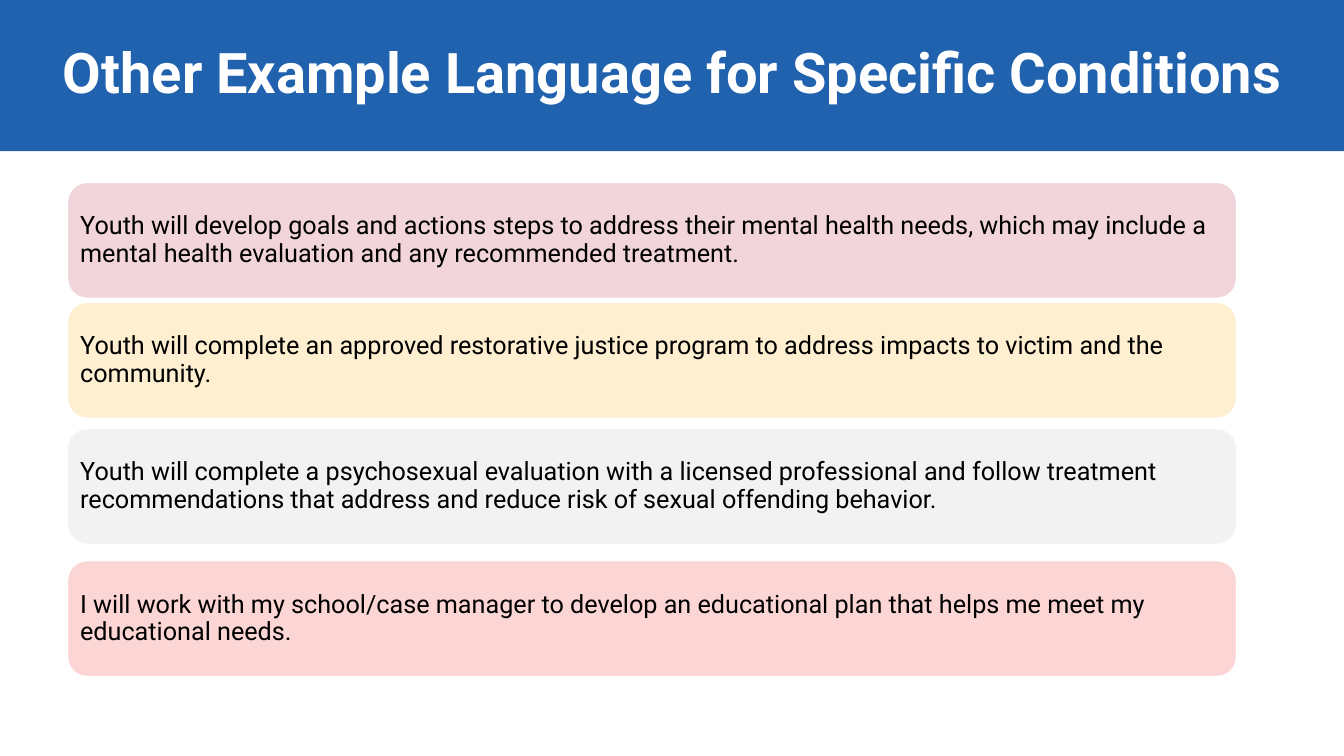
import pptx
import pptx.dml.color
import pptx.enum.shapes
import pptx.enum.text
import pptx.util
from pptx.dml.color import RGBColor

Pt = pptx.util.Pt

WHITE = RGBColor(0xFF, 0xFF, 0xFF)
BLACK = RGBColor(0x00, 0x00, 0x00)
BLUE = RGBColor(0x21, 0x62, 0xAE)
ROSE = RGBColor(0xF1, 0xD5, 0xDA)
CREAM = RGBColor(0xFE, 0xEF, 0xD1)
GRAY = RGBColor(0xF2, 0xF2, 0xF2)
PINK = RGBColor(0xFC, 0xD6, 0xD4)

SLIDE_WIDTH, SLIDE_HEIGHT = 960, 540

# Top, fill and wording of each example card
EXAMPLES = [
    (130.3, ROSE, "Youth will develop goals and actions steps to address their mental health needs, "
                  "which may include a mental health evaluation and any recommended treatment."),
    (216, CREAM, "Youth will complete an approved restorative justice program to address impacts "
                 "to victim and the community."),
    (306, GRAY, "Youth will complete a psychosexual evaluation with a licensed professional and "
                "follow treatment recommendations that address and reduce risk of sexual "
                "offending behavior."),
    (400.5, PINK, "I will work with my school/case manager to develop an educational plan that "
                  "helps me meet my educational needs."),
]


class SlideBuilder:
    """Holds the style and the current slide."""

    font_name = "Roboto"
    line_spacing = 0.9

    def __init__(self, slide):
        self.slide = slide

    def set_text(self, shape, text, size, color, alignment, bold=False):
        frame = shape.text_frame
        frame.text = text
        frame.word_wrap = True
        frame.auto_size = pptx.enum.text.MSO_AUTO_SIZE.NONE
        frame.vertical_anchor = pptx.enum.text.MSO_ANCHOR.MIDDLE
        paragraph = frame.paragraphs[0]
        paragraph.alignment = alignment
        paragraph.line_spacing = self.line_spacing
        paragraph.space_before = Pt(0)
        paragraph.font.name = self.font_name
        paragraph.font.size = Pt(size)
        paragraph.font.bold = bold
        paragraph.font.color.rgb = color

    def title_banner(self, text, height):
        title = self.slide.shapes.title
        title.left, title.top = Pt(0), Pt(0)
        title.width, title.height = Pt(SLIDE_WIDTH), Pt(height)
        title.fill.solid()
        title.fill.fore_color.rgb = BLUE
        self.set_text(title, text, 40, WHITE, pptx.enum.text.PP_ALIGN.CENTER, bold=True)

    def card(self, top, color, text):
        card = self.slide.shapes.add_shape(
            pptx.enum.shapes.MSO_SHAPE.ROUNDED_RECTANGLE,
            Pt(48.25), Pt(top), Pt(835), Pt(82.75))
        card.shadow.inherit = False
        card.fill.solid()
        card.fill.fore_color.rgb = color
        card.line.color.rgb = WHITE
        card.line.width = Pt(1)
        frame = card.text_frame
        frame.margin_left = frame.margin_right = Pt(5)
        frame.margin_top = frame.margin_bottom = Pt(5)
        self.set_text(card, text, 18, BLACK, pptx.enum.text.PP_ALIGN.LEFT)


def main():
    presentation = pptx.Presentation()
    presentation.slide_width = Pt(SLIDE_WIDTH)
    presentation.slide_height = Pt(SLIDE_HEIGHT)
    title_only = presentation.slide_layouts.get_by_name("Title Only")
    builder = SlideBuilder(presentation.slides.add_slide(title_only))

    # Title banner
    builder.title_banner("Other Example Language for Specific Conditions", 108)

    # Example cards
    for top, color, text in EXAMPLES:
        builder.card(top, color, text)

    presentation.save("out.pptx")


if __name__ == "__main__":
    main()
